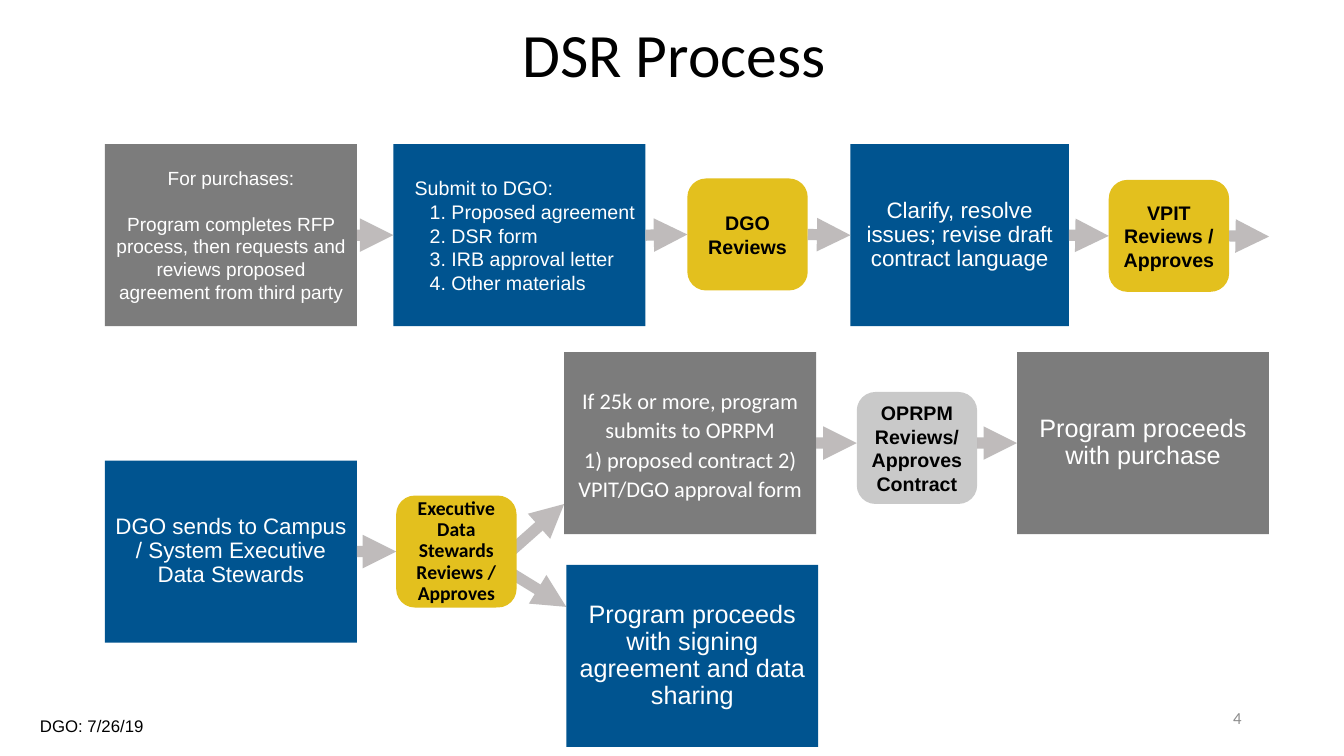
"""Build the DSR Process flow slide."""
import dataclasses

import lxml.etree
import pptx
import pptx.dml.color
import pptx.enum.shapes
import pptx.enum.text
import pptx.oxml.ns
import pptx.util

Pt = pptx.util.Pt
ALIGN = pptx.enum.text.PP_ALIGN
ANCHOR = pptx.enum.text.MSO_ANCHOR
SHAPE = pptx.enum.shapes.MSO_SHAPE
RIGHT_SIDE, LEFT_SIDE = 3, 1
STEP_SIZE = (180, 130)
GATE_SIZE = (86, 80)


@dataclasses.dataclass(frozen=True)
class Theme:
    """Colours, fonts and type sizes of the slide."""
    blue: str = "005490"
    grey: str = "7C7C7C"
    silver: str = "C9C9C9"
    gold: str = "E3C01E"
    arrow: str = "AFABAB"
    number: str = "8C8C8C"
    white: str = "FFFFFF"
    black: str = "000000"
    sans: str = "Arial"
    heading: str = "Calibri"
    title: float = 44
    large: float = 18
    medium: float = 16
    small: float = 14
    note: float = 13.6
    footer: float = 12


THEME = Theme()


def rgb(code):
    """Return a colour for a hex code."""
    return pptx.dml.color.RGBColor.from_string(code)


def add_xml(parent, tag, **attributes):
    """Append a DrawingML element to a parent."""
    return lxml.etree.SubElement(parent, pptx.oxml.ns.qn(tag), attributes)


def write(box, *lines, size=THEME.medium, color=THEME.white, font=THEME.sans, bold=False,
          align=ALIGN.CENTER, anchor=ANCHOR.MIDDLE, spacing=1.0, gap=0,
          insets=(7.2, 3.6, 7.2, 3.6), indents=None, wrap=True):
    """Fill a box with formatted paragraphs."""
    frame = box.text_frame
    frame.auto_size = pptx.enum.text.MSO_AUTO_SIZE.NONE
    frame.word_wrap = wrap
    frame.vertical_anchor = anchor
    frame.margin_left, frame.margin_top, frame.margin_right, frame.margin_bottom = map(Pt, insets)
    for index, line in enumerate(lines):
        para = frame.paragraphs[0] if index == 0 else frame.add_paragraph()
        para.alignment = align
        para.line_spacing = spacing
        para.space_before = Pt(gap if index else 0)
        if indents:
            properties = para._p.get_or_add_pPr()
            properties.set("marL", str(Pt(indents[index])))
            properties.set("indent", "0")
            add_xml(properties, "a:buNone")
        span = para.add_run()
        span.text = line
        span.font.name = font
        span.font.size = Pt(size)
        span.font.bold = bold
        span.font.color.rgb = rgb(color)


def place(box, left, top, width, height):
    """Move and size a box in points."""
    box.left, box.top, box.width, box.height = map(Pt, (left, top, width, height))


def fill(box, color):
    """Give a box a solid fill."""
    box.fill.solid()
    box.fill.fore_color.rgb = rgb(color)


def add_block(page, kind, left, top, size, color):
    """Add a flat filled shape."""
    box = page.shapes.add_shape(kind, *map(Pt, (left, top, *size)))
    box.shadow.inherit = False
    fill(box, color)
    box.line.fill.background()
    return box


def add_step(page, left, top, *lines, color=THEME.blue, box_size=STEP_SIZE, **format):
    """Add a rectangular process step."""
    box = add_block(page, SHAPE.RECTANGLE, left, top, box_size, color)
    write(box, *lines, **{"spacing": 0.9, **format})
    return box


def add_gate(page, left, top, text, color=THEME.gold, **format):
    """Add a rounded review gate."""
    box = add_block(page, SHAPE.ROUNDED_RECTANGLE, left, top, GATE_SIZE, color)
    write(box, text, size=THEME.small, color=THEME.black, bold=True,
          insets=(2.9, 2.9, 2.9, 2.9), **format)
    return box


def add_label(page, left, top, width, height, text, **format):
    """Add a plain text box."""
    box = page.shapes.add_textbox(*map(Pt, (left, top, width, height)))
    write(box, text, size=THEME.footer, **format)


def add_arrow(page, start, end, source=None, target=None):
    """Add a translucent arrow, joined to the given boxes."""
    arrow = page.shapes.add_connector(
        pptx.enum.shapes.MSO_CONNECTOR.STRAIGHT, *map(Pt, (*start, *end)))
    if source is not None:
        arrow.begin_connect(source, RIGHT_SIDE)
    if target is not None:
        arrow.end_connect(target, LEFT_SIDE)
    arrow.line.width = Pt(8)
    arrow.line.color.rgb = rgb(THEME.arrow)
    line = arrow.line._ln
    add_xml(line.find(".//" + pptx.oxml.ns.qn("a:srgbClr")), "a:alpha", val="80000")
    add_xml(line, "a:tailEnd", type="triangle")
    add_xml(arrow._element.spPr, "a:effectLst")


def main():
    """Build and save the deck."""
    deck = pptx.Presentation()
    deck.slide_width, deck.slide_height = Pt(960), Pt(540)
    page = deck.slides.add_slide(deck.slide_layouts[1])

    title, submit = page.placeholders
    place(title, 35, 14.4, 893, 106.5)
    write(title, "DSR Process", size=THEME.title, color=THEME.black, font=THEME.heading,
          anchor=ANCHOR.TOP, spacing=0.9, insets=(5, 2.9, 5, 2.9))
    place(submit, 281, 103, *STEP_SIZE)
    fill(submit, THEME.blue)
    write(submit, "Submit to DGO:", "1. Proposed agreement", "2. DSR form",
          "3. IRB approval letter", "4. Other materials", size=THEME.small,
          align=ALIGN.LEFT, insets=(7.2, 3.6, 0, 3.6), indents=(8, 18.7, 18.7, 18.7, 18.7))

    add_arrow(page, (365.8, 393), (403, 360))
    add_arrow(page, (356.4, 404), (404.5, 433.5))

    request = add_step(
        page, 75, 103, "For purchases:",
        "Program completes RFP process, then requests and reviews proposed "
        "agreement from third party",
        color=THEME.grey, size=THEME.note, spacing=1.0, gap=16)
    review = add_gate(page, 491, 127.5, "DGO Reviews")
    clarify = add_step(page, 607.5, 103, "Clarify, resolve issues; revise draft contract language",
                       box_size=(156, 130))
    approval = add_gate(page, 792, 128.5, "VPIT Reviews / Approves")
    send = add_step(page, 75, 329, "DGO sends to Campus / System Executive Data Stewards")
    stewards = add_gate(page, 283, 354, "Executive Data Stewards Reviews / Approves",
                        font=THEME.heading, spacing=0.9)
    contract = add_step(page, 403, 251.5, "If 25k or more, program submits to OPRPM",
                        "1) proposed contract 2) VPIT/DGO approval form",
                        color=THEME.grey, font=THEME.heading, spacing=1.1)
    add_gate(page, 612, 280, "OPRPM Reviews/ Approves Contract", color=THEME.silver)
    purchase = add_step(page, 726.5, 251.5, "Program proceeds with purchase",
                        color=THEME.grey, size=THEME.large)
    add_step(page, 404.5, 403.5, "Program proceeds with signing agreement and data sharing",
             size=THEME.large)

    joined = [(request, submit), (submit, review), (review, clarify),
              (clarify, approval), (send, stewards)]
    for source, target in joined:
        add_arrow(page, (0, 0), (0, 0), source, target)
    add_arrow(page, (0, 0), (906.5, 169), source=approval)
    add_arrow(page, (0, 0), (612, 316.5), source=contract)
    add_arrow(page, (698, 316.5), (0, 0), target=purchase)

    add_label(page, 678, 498, 216, 29, "4", color=THEME.number, font=THEME.heading,
              align=ALIGN.RIGHT)
    add_label(page, 21.5, 507.5, 89, 22, "DGO: 7/26/19", color=THEME.black,
              align=ALIGN.LEFT, anchor=ANCHOR.TOP, wrap=False)
    deck.save("out.pptx")


if __name__ == "__main__":
    main()
